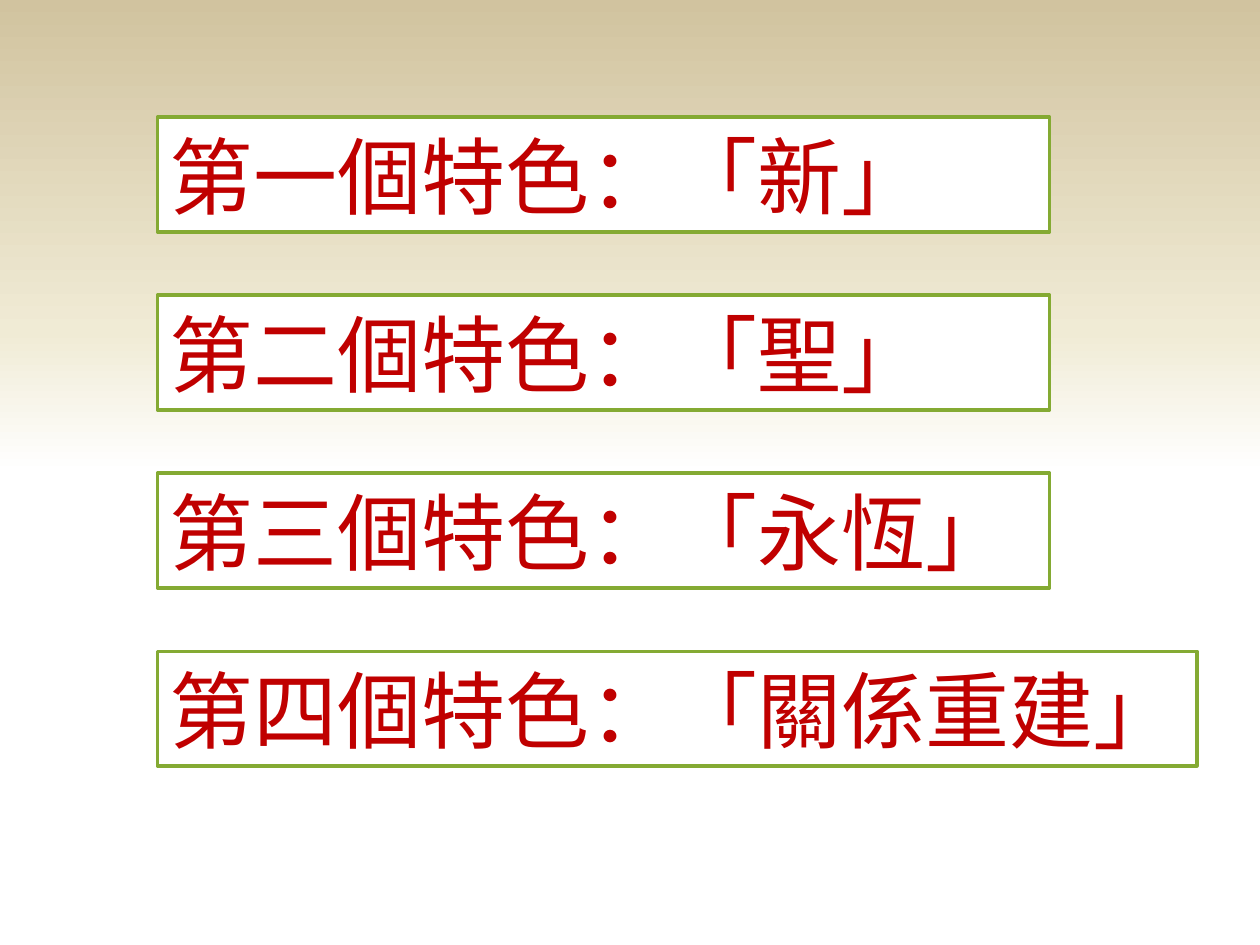
import copy

import pptx
import pptx.dml.color
import pptx.enum.shapes
import pptx.enum.text
import pptx.oxml.ns
import pptx.util
from pptx.util import Inches

COLORS = {
    "white": "FFFFFF",
    "cream": "F0EBD5",
    "tan": "D1C39F",
    "green": "84AA33",
    "red": "C00000",
}
BACKGROUND_STOPS = [(0.5, "white"), (0.65, "cream"), (1, "tan")]
FEATURES = [
    ("第一個特色：「新」", 7.08),
    ("第二個特色：「聖」", 7.08),
    ("第三個特色：「永恆」", 7.08),
    ("第四個特色：「關係重建」", 8.25),
]
LEFT, TOP, HEIGHT, PITCH = 1.25, 0.93, 0.91, 1.413
FRAME_FORMAT = {
    "word_wrap": True,
    "vertical_anchor": pptx.enum.text.MSO_ANCHOR.MIDDLE,
    "auto_size": pptx.enum.text.MSO_AUTO_SIZE.SHAPE_TO_FIT_TEXT,
}
FONT_FORMAT = {"name": "Lato", "size": pptx.util.Pt(48)}


def color(name):
    """Return the named colour as an RGBColor."""
    return pptx.dml.color.RGBColor.from_string(COLORS[name])


def apply_format(target, values):
    """Set each attribute in values on the target."""
    for name, value in values.items():
        setattr(target, name, value)


def set_background(slide):
    """Fill the slide with a gradient that fades downward to white."""
    fill = slide.background.fill
    fill.gradient()
    fill.gradient_angle = 90
    stop_list = slide._element.find(".//" + pptx.oxml.ns.qn("a:gsLst"))
    stop_list.append(copy.deepcopy(stop_list[-1]))
    for stop, (position, name) in zip(fill.gradient_stops, BACKGROUND_STOPS):
        stop.position = position
        stop.color.rgb = color(name)


def add_feature_box(slide, text, top, width):
    """Add one outlined box holding a feature heading."""
    shape = slide.shapes.add_shape(
        pptx.enum.shapes.MSO_SHAPE.RECTANGLE,
        Inches(LEFT), Inches(top), Inches(width), Inches(HEIGHT),
    )
    shape.shadow.inherit = False
    shape.fill.solid()
    shape.fill.fore_color.rgb = color("white")
    shape.line.color.rgb = color("green")
    shape.line.width = pptx.util.Pt(2)
    apply_format(shape.text_frame, FRAME_FORMAT)
    paragraph = shape.text_frame.paragraphs[0]
    paragraph.alignment = pptx.enum.text.PP_ALIGN.LEFT
    run = paragraph.add_run()
    run.text = text
    apply_format(run.font, FONT_FORMAT)
    run.font.color.rgb = color("red")


def main():
    """Build the slide of four features and save it."""
    presentation = pptx.Presentation()
    presentation.slide_width = Inches(10)
    presentation.slide_height = Inches(7.5)
    slide = presentation.slides.add_slide(presentation.slide_layouts[6])
    set_background(slide)
    for index, (text, width) in enumerate(FEATURES):
        add_feature_box(slide, text, TOP + index * PITCH, width)
    presentation.save("out.pptx")


if __name__ == "__main__":
    main()
